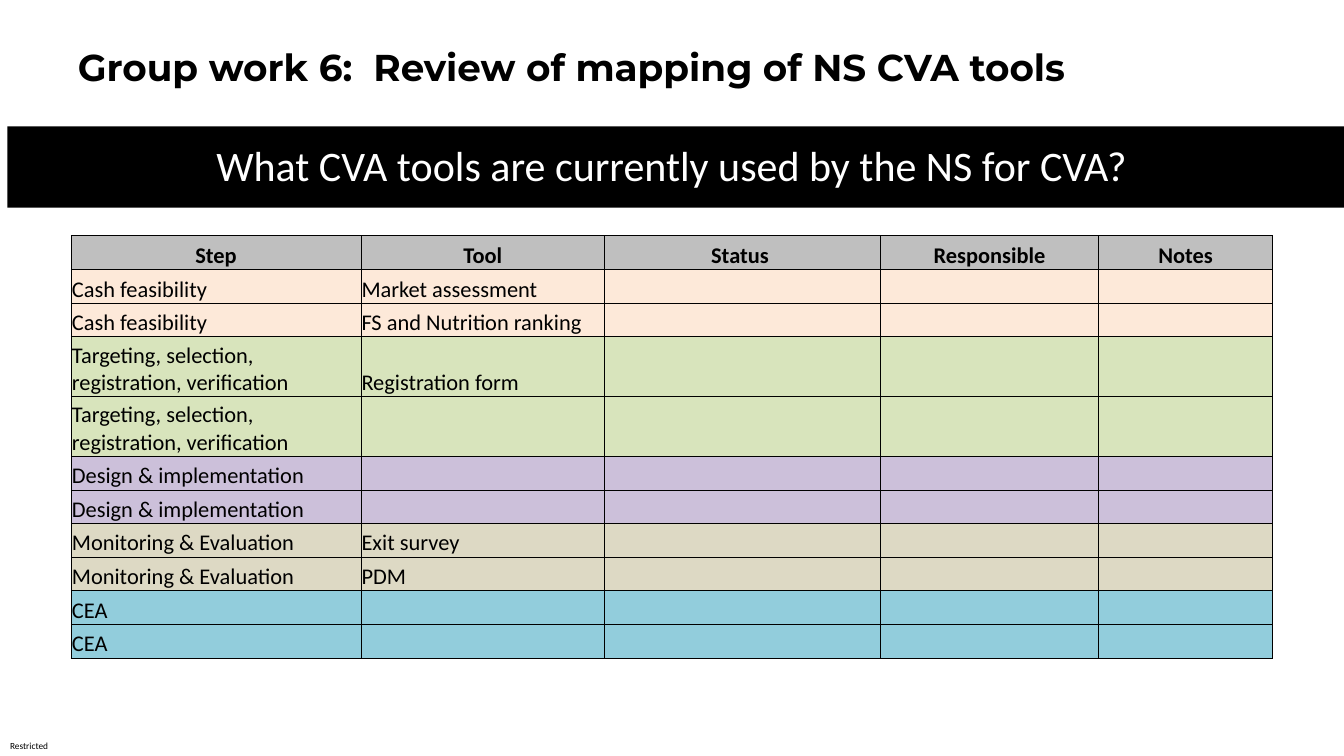
from lxml import etree
from pptx import Presentation
from pptx.dml.color import RGBColor
from pptx.enum.shapes import MSO_SHAPE
from pptx.enum.text import MSO_ANCHOR, PP_ALIGN
from pptx.oxml.ns import qn
from pptx.util import Inches, Pt

RECT = MSO_SHAPE.RECTANGLE
LEFT, CENTER = PP_ALIGN.LEFT, PP_ALIGN.CENTER
TOP, MIDDLE, BOTTOM = MSO_ANCHOR.TOP, MSO_ANCHOR.MIDDLE, MSO_ANCHOR.BOTTOM
BLACK, WHITE, GREY = "000000", "FFFFFF", "BFBFBF"
PEACH, GREEN, LILAC, SAND, AQUA = "FDE9D9", "D8E4BC", "CCC0DA", "DDD9C4", "92CDDC"

HEADS = ["Step", "Tool", "Status ", "Responsible", "Notes"]
STEPS = [
    ("Cash feasibility", PEACH, 0.5, ["Market assessment", "FS and Nutrition ranking"]),
    ("Targeting, selection, registration, verification", GREEN, 0.89, ["Registration form", ""]),
    ("Design & implementation", LILAC, 0.5, ["", ""]),
    ("Monitoring & Evaluation", SAND, 0.5, ["Exit survey", "PDM"]),
    ("CEA", AQUA, 0.5, ["", ""]),
]
WIDTHS = [4.31, 3.63, 4.1, 3.25, 2.59]


def color(code):
    return RGBColor.from_string(code)


def paint(shape, code):
    shape.fill.solid()
    shape.fill.fore_color.rgb = color(code)


def place(shape, box):
    shape.left, shape.top, shape.width, shape.height = [Inches(n) for n in box]


def inset(item, left, top, right, bottom):
    item.margin_left, item.margin_top = Inches(left), Inches(top)
    item.margin_right, item.margin_bottom = Inches(right), Inches(bottom)


def write(frame, text, size, code=BLACK, bold=False, font="Calibri", align=LEFT):
    frame.text = text
    para = frame.paragraphs[0]
    para.alignment = align
    for run in para.runs:
        run.font.size = Pt(size)
        run.font.name = font
        run.font.bold = bold
        run.font.color.rgb = color(code)
    return para


def border(cell, sides):
    props = cell._tc.get_or_add_tcPr()
    for spot, (side, width) in enumerate(sides.items()):
        line = etree.Element(qn("a:" + side), w=str(Pt(width)))
        fill = etree.SubElement(line, qn("a:solidFill"))
        etree.SubElement(fill, qn("a:srgbClr"), val=BLACK)
        props.insert(spot, line)


def add_title(slide, box):
    title = slide.shapes.title
    place(title, box)
    frame = title.text_frame
    frame.word_wrap = True
    frame.vertical_anchor = TOP
    inset(frame, 0.1, 0.05, 0.1, 0.05)
    write(frame, "Group work 6:  Review of mapping of NS CVA tools", 40,
          bold=True, font="Montserrat")


def add_text(slide, box, margins, text, size, **style):
    frame = slide.shapes.add_textbox(*[Inches(n) for n in box]).text_frame
    frame.word_wrap = True
    frame.vertical_anchor = MIDDLE
    inset(frame, *margins)
    return write(frame, text, size, **style)


def add_band(slide, box):
    left, top, width, height = box
    band = slide.shapes.add_shape(RECT, *[Inches(n) for n in box])
    band.shadow.inherit = False
    paint(band, BLACK)
    band.line.fill.background()
    para = add_text(slide, (left + 0.69, top + 0.01, width - 1.61, height + 0.01),
                    (0.15, 0.07, 0.15, 0.07),
                    "What CVA tools are currently used by the NS for CVA?",
                    45, code=WHITE, align=CENTER)
    para.line_spacing = 0.9
    para.space_after = Pt(9)


def add_grid(slide, box):
    rows = [(HEADS, GREY, 0.5)]
    for step, code, height, tools in STEPS:
        rows += [([step, tool, "", "", ""], code, height) for tool in tools]
    last = len(HEADS) - 1
    grid = slide.shapes.add_table(len(rows), len(HEADS), *[Inches(n) for n in box]).table
    for col, width in zip(grid.columns, WIDTHS):
        col.width = Inches(width)
    for r, (texts, code, height) in enumerate(rows):
        grid.rows[r].height = Inches(height)
        head = r == 0
        for c, text in enumerate(texts):
            cell = grid.cell(r, c)
            cell.vertical_anchor = BOTTOM
            inset(cell, 0.01, 0.01, 0.01, 0)
            write(cell.text_frame, text, 24, bold=head, align=CENTER if head else LEFT)
            paint(cell, code)
            border(cell, {"lnL": 1 if c == 0 else 0.75, "lnR": 1 if c == last else 0.75,
                          "lnT": 1 if head else 0.75, "lnB": 0.75})


def main():
    deck = Presentation()
    deck.slide_width, deck.slide_height = Inches(20), Inches(11.25)
    slide = deck.slides.add_slide(deck.slide_layouts[5])
    paint(slide.background, WHITE)
    add_text(slide, (0, 10.96, 0.88, 0.29), (0.15, 0, 0, 0), "Restricted", 10)
    add_band(slide, (0.11, 1.88, 20, 1.21))
    add_grid(slide, (1.06, 3.51, 17.89, 6.25))
    add_title(slide, (1.06, 0.61, 16.25, 0.77))
    deck.save("out.pptx")


if __name__ == "__main__":
    main()
